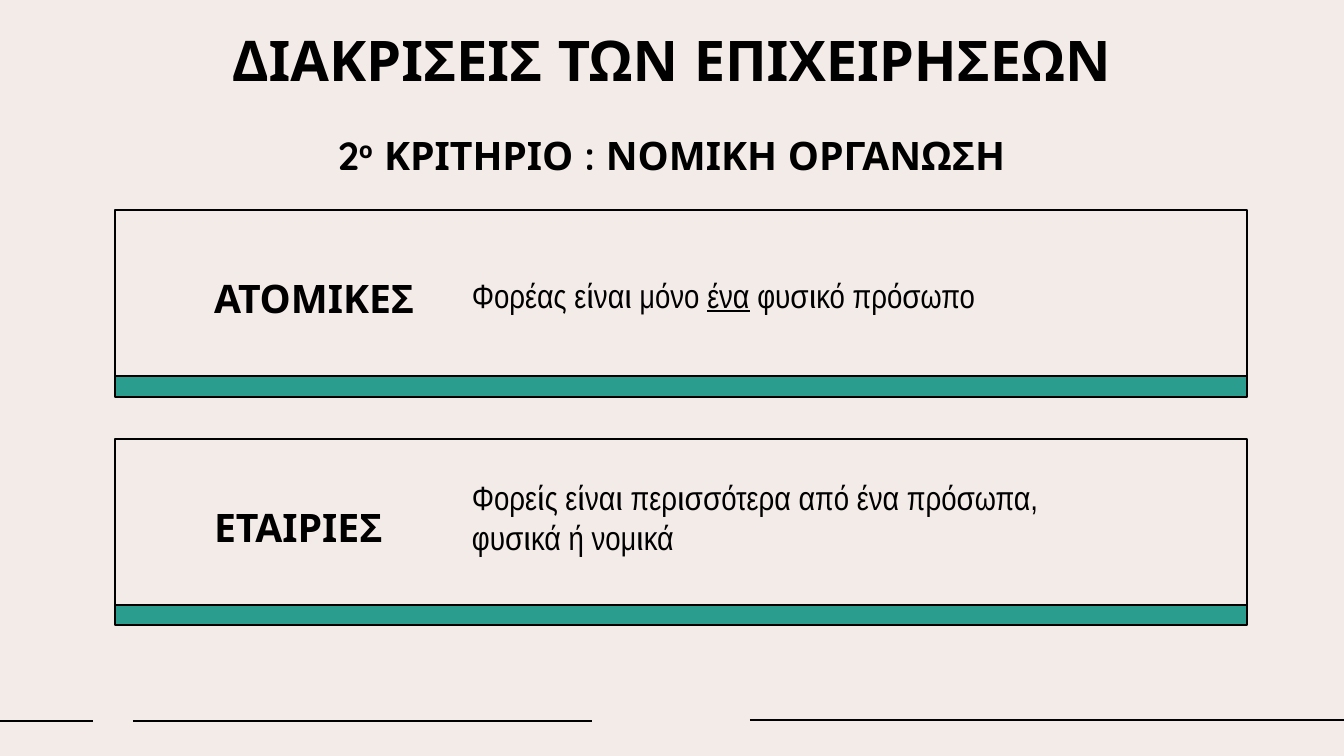
from pptx import Presentation
from pptx.dml.color import RGBColor
from pptx.enum.shapes import MSO_CONNECTOR, MSO_SHAPE
from pptx.enum.text import MSO_ANCHOR, PP_ALIGN
from pptx.oxml.ns import qn
from pptx.util import Pt
from lxml.etree import SubElement

BACKGROUND = RGBColor(0xF3, 0xEB, 0xE8)
TEAL = RGBColor(0x2A, 0x9D, 0x8F)
BLACK = RGBColor(0, 0, 0)
HEADING_FONT, BODY_FONT = "Quicksand", "Arial Narrow"

TITLE = [("ΔΙΑΚΡΙΣΕΙΣ ΤΩΝ ΕΠΙΧΕΙΡΗΣΕΩΝ", "")]
CRITERION = [("2", ""), ("ο", "superscript"), (" ΚΡΙΤΗΡΙΟ : ΝΟΜΙΚΗ ΟΡΓΑΝΩΣΗ", "")]
CARDS = [
    {"label": "ΑΤΟΜΙΚΕΣ", "top": 210, "base_top": 231, "text_box": (462, 222, 757, 146),
     "text": [("Φορέας είναι μόνο ", ""), ("ένα", "underline"), (" φυσικό πρόσωπο", "")]},
    {"label": "ΕΤΑΙΡΙΕΣ", "top": 439, "base_top": 459, "text_box": (462, 444, 673, 146),
     "text": [("Φορείς είναι περισσότερα από ένα πρόσωπα, φυσικά ή νομικά", "")]},
]
FOOTER_LINES = [(0, 93, 721), (133, 592, 721), (750, 1344, 720)]
CARD_LEFT, CARD_WIDTH, CARD_HEIGHT = 115, 1132, 166
HEADING_LEFT, HEADING_WIDTH = 125, 1093


def px(length):
    """Turn slide pixels into EMU."""
    return round(length * 914400 / 100.8)


def place(shape, box):
    """Move a shape to a pixel box."""
    shape.left, shape.top, shape.width, shape.height = map(px, box)


def write(shape, runs, size, font, bold=False, anchor=MSO_ANCHOR.TOP,
          align=PP_ALIGN.LEFT, spacing=1.0):
    """Fill a shape with one paragraph of runs."""
    frame = shape.text_frame
    frame.word_wrap = True
    frame.vertical_anchor = anchor
    paragraph = frame.paragraphs[0]
    paragraph.alignment = align
    paragraph.line_spacing = spacing
    for text, style in runs:
        run = paragraph.add_run()
        run.text = text
        run.font.size = Pt(size)
        run.font.name = font
        run.font.bold = bold
        run.font.color.rgb = BLACK
        if style == "underline":
            run.font.underline = True
        if style == "superscript":
            run.font._element.set("baseline", "30000")


def add_text(slide, box, runs, size, font, **layout):
    """Add a text box at a pixel box."""
    shape = slide.shapes.add_textbox(*map(px, box))
    write(shape, runs, size, font, **layout)


def add_panel(slide, top, color):
    """Add an outlined card rectangle."""
    shape = slide.shapes.add_shape(
        MSO_SHAPE.RECTANGLE, *map(px, (CARD_LEFT, top, CARD_WIDTH, CARD_HEIGHT)))
    shape.shadow.inherit = False
    shape.fill.solid()
    shape.fill.fore_color.rgb = color
    shape.line.color.rgb = BLACK
    shape.line.width = Pt(2)
    return shape


def add_footer_line(slide, start, end, y):
    """Add a thin horizontal line."""
    line = slide.shapes.add_connector(
        MSO_CONNECTOR.STRAIGHT, px(start), px(y), px(end), px(y))
    line.line.color.rgb = BLACK
    line.line.width = Pt(1)
    SubElement(line._element.spPr, qn("a:effectLst"))


def add_card(slide, card):
    """Add a labelled card with its explanation."""
    panel = add_panel(slide, card["top"], BACKGROUND)
    frame = panel.text_frame
    frame.margin_left, frame.margin_right = px(99), px(716)
    frame.margin_top = frame.margin_bottom = px(5)
    write(panel, [(card["label"], "")], 28, HEADING_FONT, bold=True,
          anchor=MSO_ANCHOR.MIDDLE, spacing=1.2)
    add_text(slide, card["text_box"], card["text"], 24, BODY_FONT,
             anchor=MSO_ANCHOR.MIDDLE)


def main():
    """Build and save the slide."""
    presentation = Presentation()
    presentation.slide_width, presentation.slide_height = px(1344), px(756)
    slide = presentation.slides.add_slide(presentation.slide_layouts[5])
    slide.background.fill.solid()
    slide.background.fill.fore_color.rgb = BACKGROUND
    for footer_line in FOOTER_LINES:
        add_footer_line(slide, *footer_line)
    for card in CARDS:
        add_panel(slide, card["base_top"], TEAL)
    for card in CARDS:
        add_card(slide, card)
    title = slide.shapes.title
    place(title, (HEADING_LEFT, 20, HEADING_WIDTH, 89))
    write(title, TITLE, 40, HEADING_FONT, bold=True, align=PP_ALIGN.CENTER)
    add_text(slide, (HEADING_LEFT, 126, HEADING_WIDTH, 72), CRITERION, 28,
             HEADING_FONT, bold=True, align=PP_ALIGN.CENTER)
    presentation.save("out.pptx")


if __name__ == "__main__":
    main()
